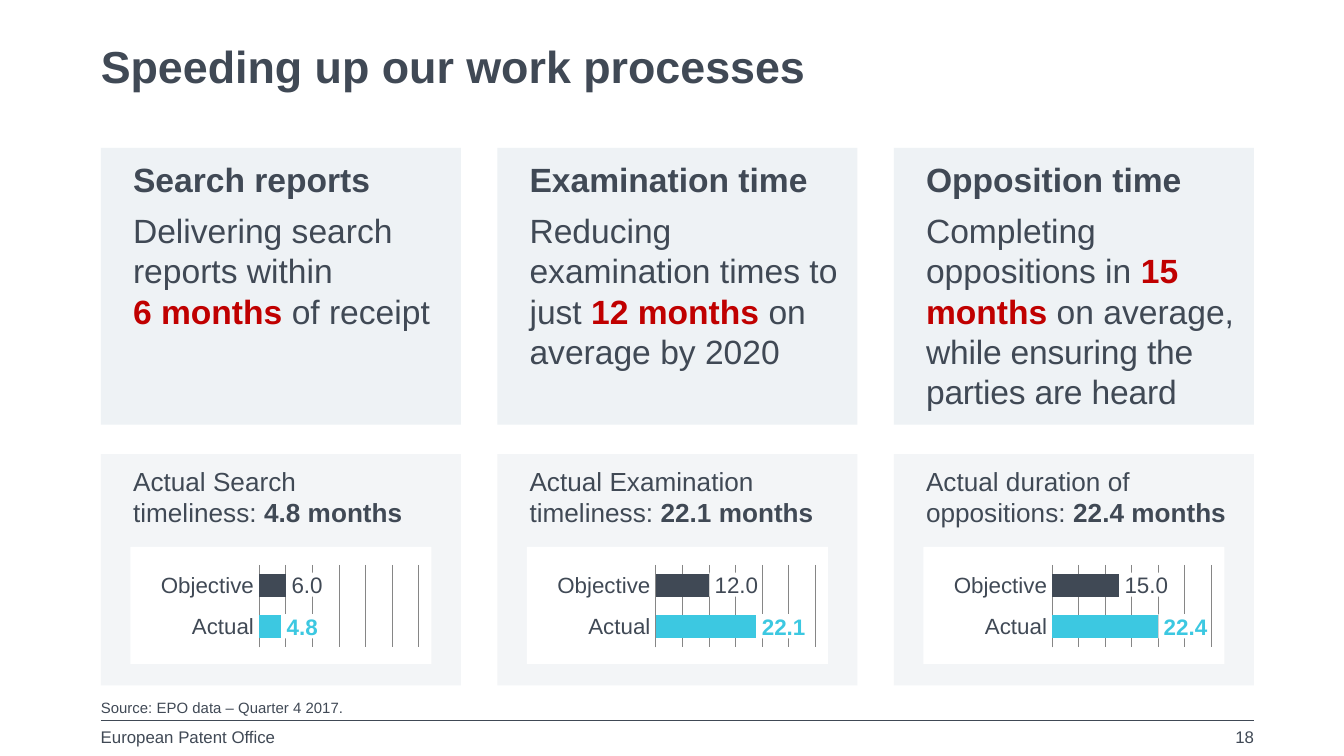
"""Build the slide on faster work processes with three topic columns."""
from dataclasses import dataclass
from typing import NamedTuple

from lxml.etree import SubElement
from pptx import Presentation
from pptx.chart.data import CategoryChartData
from pptx.dml.color import RGBColor
from pptx.enum.chart import XL_CHART_TYPE as CT, XL_TICK_MARK as TM
from pptx.enum.shapes import MSO_CONNECTOR, MSO_SHAPE
from pptx.enum.text import MSO_ANCHOR as ANCHOR, PP_ALIGN as ALIGN
from pptx.oxml.ns import qn
from pptx.util import Inches, Pt

COLORS = {
    "ink": "404955", "red": "C00000", "cyan": "3CC8E1", "white": "FFFFFF",
    "goal": "EEF2F5", "result": "F3F5F7", "grid": "868686",
}
LEFT, STEP, WIDTH = 0.75, 2.95, 2.68
CHART_W, PLOT_START = 2.05, 0.42
PAD = (0.24, 0.08, 0.08, 0.16)
NO_PAD = (0, 0, 0, 0)


class Run(NamedTuple):
    text: str
    bold: bool = False
    color: str = "ink"
    new_line: bool = False
    tracking: int = 0


@dataclass
class Topic:
    heading: str
    goal: list[Run]
    result: list[Run]
    actual: str
    objective: str
    bars: tuple[int, int]
    axis_max: int
    axis_step: float


TOPICS = [
    Topic("Search reports",
          [Run("Delivering search reports within"),
           Run("6 months ", True, "red", True), Run("of receipt")],
          [Run("Actual Search"), Run("timeliness: ", new_line=True),
           Run("4.8 months", True)],
          "4.8", "6.0", (82, 100), 600, 100),
    Topic("Examination time",
          [Run("Reducing examination times to just "),
           Run("12 months ", True, "red"), Run("on average by 2020")],
          [Run("Actual Examination timeliness: "), Run("22.1 months", True)],
          "22.1", "12.0", (100, 53), 159, 26.5),
    Topic("Opposition time",
          [Run("Completing oppositions in "), Run("15 months ", True, "red"),
           Run("on average, "),
           Run("while ensuring the parties are heard", tracking=-10)],
          [Run("Actual duration of oppositions: "), Run("22.4 months", True)],
          "22.4", "15.0", (100, 63), 151, 25),
]


def rgb(name: str) -> RGBColor:
    return RGBColor.from_string(COLORS[name])


def style(font, size: float, color: str = "ink", bold: bool = False) -> None:
    font.name, font.size, font.bold = "Arial", Pt(size), bold
    font.color.rgb = rgb(color)


def write(sp, paragraphs: list[list[Run]], size: float, pad=NO_PAD,
          anchor=ANCHOR.TOP, align=ALIGN.LEFT, wrap: bool = True) -> None:
    tf = sp.text_frame
    tf.word_wrap, tf.vertical_anchor = wrap, anchor
    (tf.margin_left, tf.margin_top,
     tf.margin_right, tf.margin_bottom) = map(Inches, pad)
    for i, runs in enumerate(paragraphs):
        p = tf.add_paragraph() if i else tf.paragraphs[0]
        p.alignment = align
        p.space_before = Pt(6 if i else 0)
        for run in runs:
            if run.new_line:
                p.add_line_break()
                SubElement(p._p[-1], qn("a:rPr"), sz=str(size * 100))
            r = p.add_run()
            r.text = run.text
            style(r.font, size, run.color, run.bold)
            if run.tracking:
                r._r.rPr.set("spc", str(run.tracking))


def add_box(s, x: float, y: float, w: float, h: float, fill: str):
    sp = s.shapes.add_shape(MSO_SHAPE.RECTANGLE, *map(Inches, (x, y, w, h)))
    sp.shadow.inherit = False
    sp.fill.solid()
    sp.fill.fore_color.rgb = rgb(fill)
    sp.line.fill.background()
    return sp


def add_text(s, x: float, y: float, w: float, h: float, text: str,
             size: float, **options) -> None:
    tb = s.shapes.add_textbox(*map(Inches, (x, y, w, h)))
    write(tb, [[Run(text)]], size, **options)


def set_plot_area(chart) -> None:
    area = chart._chartSpace.chart.plotArea
    for old in area.findall(qn("c:layout")):
        area.remove(old)
    layout = SubElement(area, qn("c:layout"))
    area.insert(0, layout)
    manual = SubElement(layout, qn("c:manualLayout"))
    for tag, val in (("layoutTarget", "inner"), ("xMode", "edge"),
                     ("yMode", "edge"), ("x", PLOT_START), ("y", 0),
                     ("w", 1 - PLOT_START), ("h", 1)):
        SubElement(manual, qn(f"c:{tag}"), val=str(val))


def add_bars(s, x: float, topic: Topic) -> None:
    data = CategoryChartData(number_format="General")
    data.categories = ["Actual", "Objective"]
    data.add_series("Series 1", topic.bars)
    chart = s.shapes.add_chart(
        CT.BAR_STACKED, *map(Inches, (x, 4.2, CHART_W, 0.62)), data).chart
    chart.has_legend = chart.has_title = False
    style(chart.font, 18)
    set_plot_area(chart)
    plot = chart.plots[0]
    plot.gap_width, plot.overlap, plot.vary_by_categories = 75, 100, False
    series = plot.series[0]
    for fmt, color in ((series.format, "ink"),
                       (series.points[0].format, "cyan")):
        fmt.fill.solid()
        fmt.fill.fore_color.rgb = rgb(color)
    cat, val = chart.category_axis, chart.value_axis
    cat.major_tick_mark = cat.minor_tick_mark = TM.NONE
    style(cat.tick_labels.font, 12)
    val.visible, val.has_major_gridlines = False, True
    val.minimum_scale, val.maximum_scale = 0, topic.axis_max
    val.major_unit = topic.axis_step
    for line in (cat.format.line, val.major_gridlines.format.line):
        line.color.rgb, line.width = rgb("grid"), Pt(0.5)


def add_topic(s, x: float, topic: Topic) -> None:
    write(add_box(s, x, 1.1, WIDTH, 2.06, "goal"),
          [[Run(topic.heading, True)], topic.goal], 18, PAD)
    write(add_box(s, x, 3.38, WIDTH, 1.72, "result"),
          [topic.result], 14, PAD)
    add_box(s, x + 0.22, 4.07, 2.24, 0.87, "white")
    chart_x = x + 0.32
    add_bars(s, chart_x, topic)
    labels = (Run(topic.actual, True, "cyan"), Run(topic.objective))
    for label, value, y in zip(labels, topic.bars, (4.57, 4.26)):
        share = PLOT_START + (1 - PLOT_START) * value / topic.axis_max
        w = 0.31 if len(label.text) == 3 else 0.38
        sp = add_box(s, chart_x + CHART_W * share, y, w, 0.18, "white")
        write(sp, [[label]], 12, (0.04, 0, 0, 0), ANCHOR.MIDDLE, wrap=False)


def add_footer(s) -> None:
    line = s.shapes.add_connector(
        MSO_CONNECTOR.STRAIGHT, *map(Inches, (LEFT, 5.36, 9.33, 5.36)))
    line.line.color.rgb, line.line.width = rgb("ink"), Pt(0.75)
    SubElement(line._element.spPr, qn("a:effectLst"))
    add_text(s, LEFT, 5.2, 8.58, 0.13, "Source: EPO data – Quarter 4 2017.",
             8, anchor=ANCHOR.BOTTOM)
    add_text(s, LEFT, 5.41, 1.7, 0.19, "European Patent Office", 9)
    add_text(s, 8.7, 5.41, 0.63, 0.19, "18", 9, align=ALIGN.RIGHT)


def main() -> None:
    prs = Presentation()
    prs.slide_width = Inches(10)
    prs.slide_height = prs.slide_width * 9 // 16
    s = prs.slides.add_slide(prs.slide_layouts[5])
    title = s.shapes.title
    title.left, title.top = Inches(LEFT), Inches(0.29)
    title.width, title.height = Inches(8.69), Inches(0.44)
    write(title, [[Run("Speeding up our work processes", True)]], 24)
    for i, topic in enumerate(TOPICS):
        add_topic(s, LEFT + i * STEP, topic)
    add_footer(s)
    prs.save("out.pptx")


if __name__ == "__main__":
    main()
